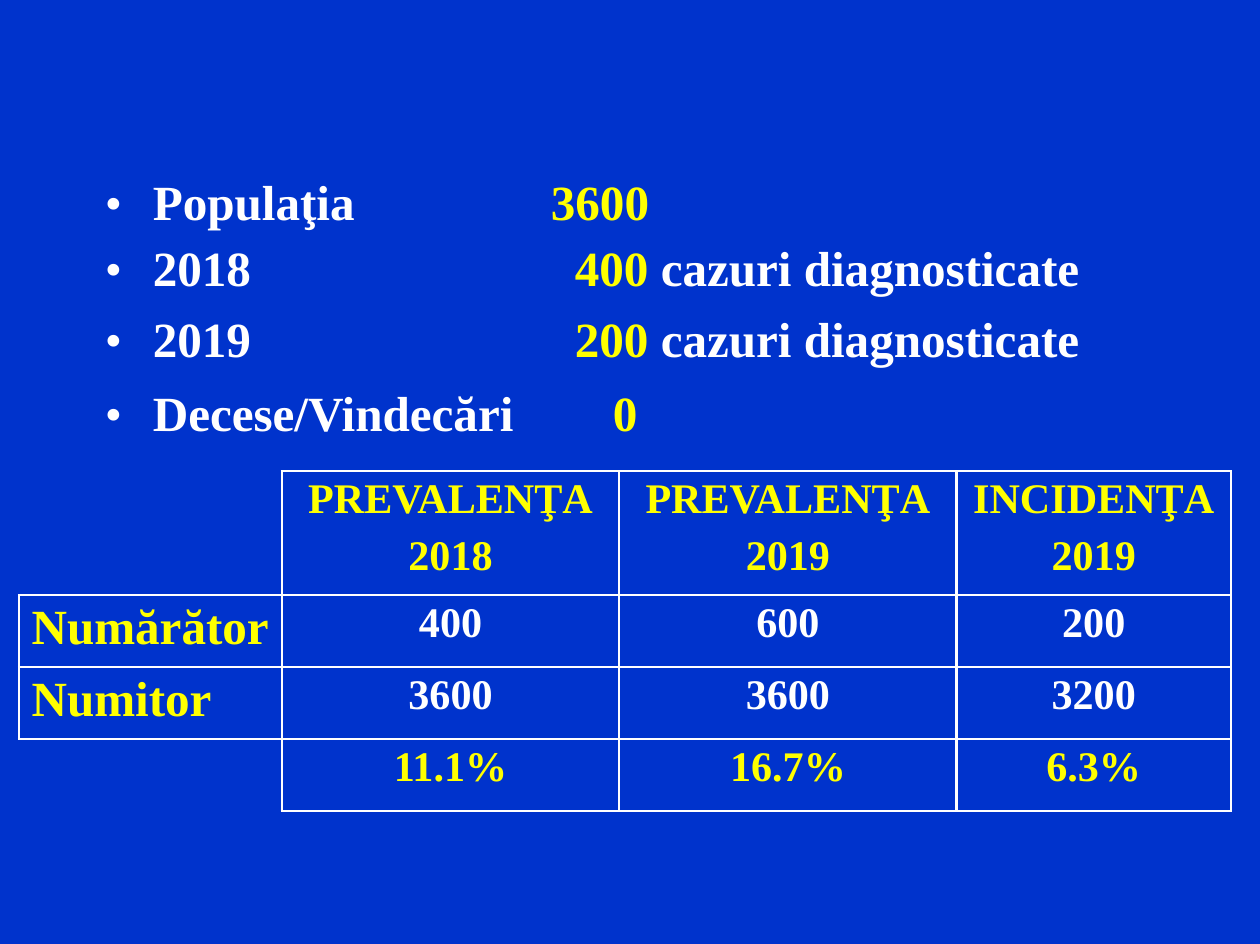
from dataclasses import dataclass

from lxml.etree import SubElement
from pptx import Presentation
from pptx.dml.color import RGBColor as Rgb
from pptx.enum.text import PP_ALIGN as Align
from pptx.oxml import parse_xml
from pptx.oxml.ns import nsdecls, qn
from pptx.util import Inches, Pt


@dataclass(frozen=True)
class Theme:
    font: str = "Times New Roman"
    blue: str = "0033CC"
    white: str = "FFFFFF"
    yellow: str = "FFFF00"
    large: int = 28
    small: int = 24
    rule: float = 1.5


THEME = Theme()

FACTS = [
    ("Populaţia", "3600", ""),
    ("2018", "400 ", "cazuri diagnosticate"),
    ("2019", "200 ", "cazuri diagnosticate"),
    ("Decese/Vindecări", "0", ""),
]
HEADS = [("PREVALENŢA", "2018"), ("PREVALENŢA", "2019"), ("INCIDENŢA", "2019")]
RATES = [
    ("Numărător", "400", "600", "200"),
    ("Numitor", "3600", "3600", "3200"),
    ("", "11.1%", "16.7%", "6.3%"),
]


def write(para, text, size=THEME.small, color=THEME.white, bold=True):
    run = para.add_run()
    run.text = text
    font = run.font
    font.name, font.size, font.bold = THEME.font, Pt(size), bold
    font.color.rgb = Rgb.from_string(color)


def layout(para, align=Align.LEFT, before=0.0, line=None):
    para.alignment = align
    para.space_before = Pt(before)
    if line:
        para.line_spacing = Pt(line)
    return para


def pad(cell, left=0.0, top=0.0):
    cell.margin_left, cell.margin_top = Inches(left), Inches(top)
    cell.margin_right = cell.margin_bottom = 0


def border(cell, sides):
    """Rule the named sides (of "LRTB") and leave the others bare."""
    props = cell._tc.get_or_add_tcPr()
    for place, side in enumerate("LRTB"):
        line = parse_xml(f"<a:ln{side} {nsdecls('a')}/>")
        if side in sides:
            line.set("w", str(Pt(THEME.rule)))
            fill = SubElement(line, qn("a:solidFill"))
            SubElement(fill, qn("a:srgbClr")).set("val", THEME.white)
        else:
            SubElement(line, qn("a:noFill"))
        props.insert(place, line)


def grid(slide, left, top, cols, rows):
    """Add a plain blue table with the given column widths and row heights."""
    frame = slide.shapes.add_table(
        len(rows), len(cols), Inches(left), Inches(top),
        Inches(sum(cols)), Inches(sum(rows)))
    table = frame.table
    table.first_row = table.horz_banding = False
    for col, width in zip(table.columns, cols):
        col.width = Inches(width)
    for row, height in zip(table.rows, rows):
        row.height = Inches(height)
    for cell in table.iter_cells():
        cell.fill.solid()
        cell.fill.fore_color.rgb = Rgb.from_string(THEME.blue)
    return table


def add_facts(slide):
    table = grid(slide, 0.8, 1.4, [0.29, 3.13, 4.32], [0.5, 0.56, 0.56, 0.5])
    lines = [30.6, None, None, 33]
    indents = [0.14, 0, 0, 0.63]
    for row, (label, count, note) in enumerate(FACTS):
        paras = []
        for col, left in enumerate([0.03, 0.12, indents[row]]):
            cell = table.cell(row, col)
            pad(cell, left, 0.02 if row else 0)
            border(cell, "")
            align = Align.RIGHT if note and col == 2 else Align.LEFT
            paras.append(layout(cell.text_frame.paragraphs[0], align,
                                1.6 if row else 0, lines[row]))
        mark, name, value = paras
        write(mark, "•", THEME.large, bold=False)
        write(name, label, THEME.large)
        write(value, count, THEME.large, THEME.yellow)
        if note:
            write(value, note, THEME.large)


def add_rates(slide):
    table = grid(slide, 0.15, 3.73, [2.08, 2.67, 2.67, 2.17],
                 [0.98] + [0.57] * 3)
    corners = {(0, 0): "RB", (3, 0): "TR"}
    for row in range(4):
        for col in range(4):
            cell = table.cell(row, col)
            pad(cell, 0 if col else 0.1, 0.04)
            border(cell, corners.get((row, col), "LRTB"))

    for col, (name, year) in enumerate(HEADS, 1):
        frame = table.cell(0, col).text_frame
        first = layout(frame.paragraphs[0], Align.CENTER, 2.8)
        write(first, name, color=THEME.yellow)
        second = layout(frame.add_paragraph(), Align.CENTER, 5.7)
        write(second, year, color=THEME.yellow)

    for row, (label, *values) in enumerate(RATES, 1):
        if label:
            para = table.cell(row, 0).text_frame.paragraphs[0]
            write(layout(para, before=2.8), label, THEME.large, THEME.yellow)
        color = THEME.white if label else THEME.yellow
        for col, value in enumerate(values, 1):
            para = table.cell(row, col).text_frame.paragraphs[0]
            write(layout(para, Align.CENTER, 2.8), value, color=color)


def main():
    deck = Presentation()
    deck.slide_width, deck.slide_height = Inches(9.97), Inches(7.47)
    slide = deck.slides.add_slide(deck.slide_layouts[6])
    back = slide.background.fill
    back.solid()
    back.fore_color.rgb = Rgb.from_string(THEME.blue)
    add_facts(slide)
    add_rates(slide)
    deck.save("out.pptx")


if __name__ == "__main__":
    main()
